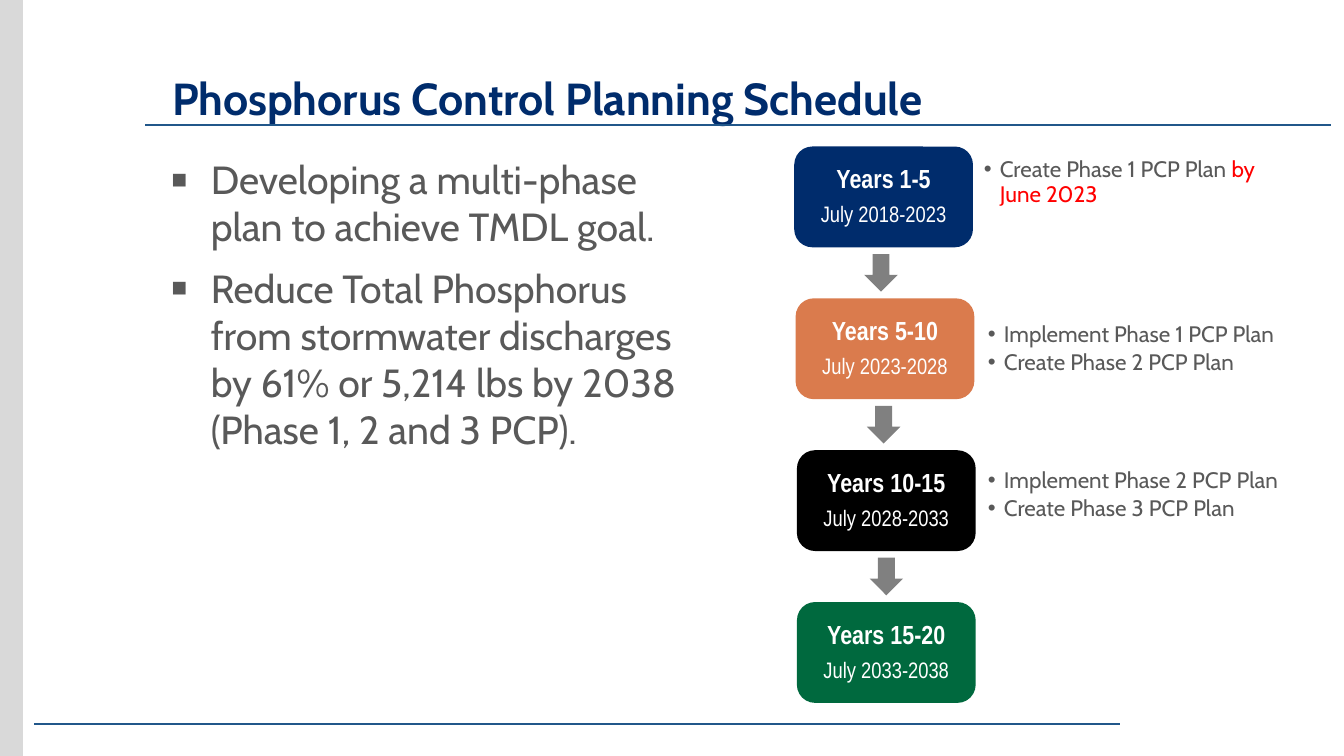
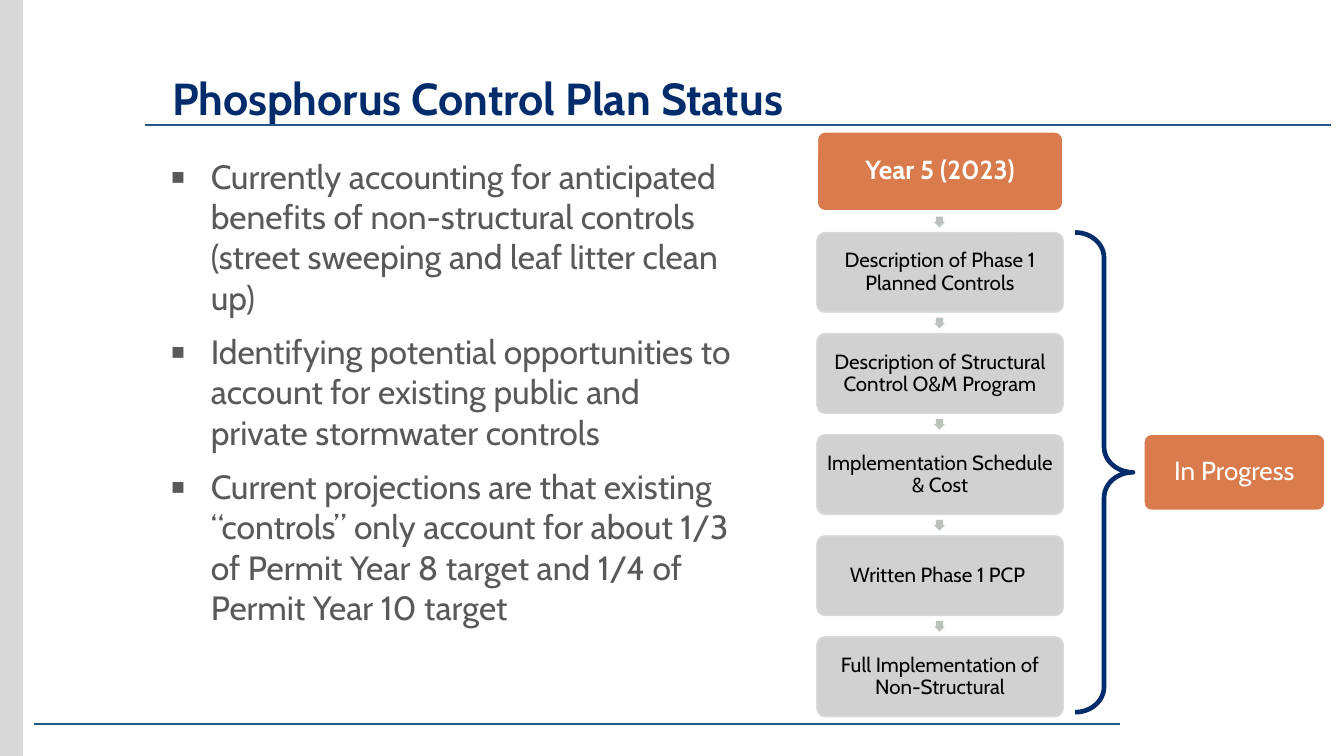
"""Builds two slides on the phosphorus control plan: its schedule and its status."""
from lxml import etree
from pptx import Presentation
from pptx.dml.color import RGBColor
from pptx.enum.shapes import MSO_CONNECTOR, MSO_SHAPE
from pptx.enum.text import MSO_ANCHOR, MSO_AUTO_SIZE, PP_ALIGN
from pptx.oxml.ns import qn
from pptx.util import Inches, Pt

RECT, ROUNDED = MSO_SHAPE.RECTANGLE, MSO_SHAPE.ROUNDED_RECTANGLE
DOWN_ARROW, RIGHT_ARROW = MSO_SHAPE.DOWN_ARROW, MSO_SHAPE.RIGHT_ARROW
BRACE = MSO_SHAPE.RIGHT_BRACE
STRAIGHT = MSO_CONNECTOR.STRAIGHT
TOP, MIDDLE, BOTTOM = MSO_ANCHOR.TOP, MSO_ANCHOR.MIDDLE, MSO_ANCHOR.BOTTOM
LEFT, CENTER = PP_ALIGN.LEFT, PP_ALIGN.CENTER
NO_AUTOFIT = MSO_AUTO_SIZE.NONE

NAVY = RGBColor(0x00, 0x2C, 0x6C)
ORANGE = RGBColor(0xDA, 0x7B, 0x4D)
GREEN = RGBColor(0x00, 0x69, 0x3E)
BLACK = RGBColor(0x00, 0x00, 0x00)
WHITE = RGBColor(0xFF, 0xFF, 0xFF)
RED = RGBColor(0xFF, 0x00, 0x00)
TEXT_GRAY = RGBColor(0x59, 0x59, 0x59)
BAND_GRAY = RGBColor(0xD9, 0xD9, 0xD9)
ARROW_GRAY = RGBColor(0x80, 0x80, 0x80)
STEP_GRAY = RGBColor(0xCC, 0xCC, 0xCC)
STEP_EDGE = RGBColor(0xD5, 0xD9, 0xD6)
STEP_ARROW = RGBColor(0xBB, 0xC3, 0xBC)
RULE_BLUE = RGBColor(0x21, 0x57, 0x8A)

BODY_FONT, STAGE_FONT = "Cabin", "Arial Narrow"
SLIDE_WIDTH = 10
SLIDE_HEIGHT = SLIDE_WIDTH * 9 / 16
RULES = [(8.33, 0.25, 5.39), (9.9, 1.08, 0.93)]

SCHEDULE_TITLE = "Phosphorus Control Planning Schedule"
SCHEDULE_POINTS = [
    "Developing a multi-phase plan to achieve TMDL goal.",
    "Reduce Total Phosphorus from stormwater discharges by 61% or 5,214 lbs "
    "by 2038 (Phase 1, 2 and 3 PCP).",
]
STAGES = [
    ("Years 1-5", "July 2018-2023", NAVY, 5.91),
    ("Years 5-10", "July 2023-2028", ORANGE, 5.92),
    ("Years 10-15", "July 2028-2033", BLACK, 5.93),
    ("Years 15-20", "July 2033-2038", GREEN, 5.93),
]
STAGE_TASKS = [
    ((7.27, 1.13, 2.33, 0.75), TOP,
     [[("Create Phase 1 PCP Plan ", TEXT_GRAY), ("by June 2023", RED)]]),
    ((7.3, 2.22, 2.66, 0.75), MIDDLE,
     [[("Implement Phase 1 PCP Plan", TEXT_GRAY)], [("Create Phase 2 PCP Plan", TEXT_GRAY)]]),
    ((7.3, 3.31, 2.45, 0.75), MIDDLE,
     [[("Implement Phase 2 PCP Plan", TEXT_GRAY)], [("Create Phase 3 PCP Plan", TEXT_GRAY)]]),
]

STATUS_TITLE = "Phosphorus Control Plan Status"
STATUS_POINTS = [
    "Currently accounting for anticipated benefits of non-structural controls "
    "(street sweeping and leaf litter clean up)",
    "Identifying potential opportunities to account for existing public and "
    "private stormwater controls",
    "Current projections are that existing “controls” only account for about "
    "1/3 of Permit Year 8 target and 1/4 of Permit Year 10 target",
]
MILESTONE = "Year 5 (2023)"
STEPS = [
    "Description of Phase 1 Planned Controls",
    "Description of Structural Control O&M Program",
    "Implementation Schedule & Cost",
    "Written Phase 1 PCP ",
    "Full Implementation of Non-Structural",
]
PROGRESS = "In Progress"


def place(box):
    return [Inches(value) for value in box]


def set_font(font, size, color, name=BODY_FONT, bold=False):
    font.size, font.name, font.bold = Pt(size), name, bold
    font.color.rgb = color


def set_frame(frame, anchor, inset_x, inset_y):
    frame.word_wrap, frame.auto_size = True, NO_AUTOFIT
    frame.vertical_anchor = anchor
    frame.margin_left = frame.margin_right = Inches(inset_x)
    frame.margin_top = frame.margin_bottom = Inches(inset_y)


def set_bullet(paragraph, char, indent, percent=100):
    props = paragraph._p.get_or_add_pPr()
    props.set("marL", str(Inches(indent)))
    props.set("indent", str(-Inches(indent)))
    color = etree.SubElement(props, qn("a:buClr"))
    etree.SubElement(color, qn("a:srgbClr"), val=str(TEXT_GRAY))
    etree.SubElement(props, qn("a:buSzPct"), val=str(percent * 1000))
    etree.SubElement(props, qn("a:buFont"), typeface="Arial")
    etree.SubElement(props, qn("a:buChar"), char=char)


def paragraphs(frame, count):
    return [frame.paragraphs[0]] + [frame.add_paragraph() for _ in range(count - 1)]


def add_figure(slide, kind, box, fill=None, line=None, width=1, adjust=()):
    figure = slide.shapes.add_shape(kind, *place(box))
    figure.shadow.inherit = False
    for index, value in enumerate(adjust):
        figure.adjustments[index] = value
    if fill is None:
        figure.fill.background()
    else:
        figure.fill.solid()
        figure.fill.fore_color.rgb = fill
    if line is None:
        figure.line.fill.background()
    else:
        figure.line.color.rgb = line
        figure.line.width = Pt(width)
    return figure


def add_label(figure, lines, inset):
    set_frame(figure.text_frame, MIDDLE, inset, inset)
    for paragraph, (text, *style) in zip(paragraphs(figure.text_frame, len(lines)), lines):
        paragraph.text = text
        paragraph.alignment = CENTER
        paragraph.line_spacing = 0.9
        paragraph.space_after = Pt(5)
        size, color, name, bold = style
        set_font(paragraph.font, size, color, name, bold)


def make_translucent(figure, percent):
    for color in figure._element.spPr.iter(qn("a:srgbClr")):
        etree.SubElement(color, qn("a:alpha"), val=str(percent * 1000))


def add_slide(deck, heading, points, size, width):
    slide = deck.slides.add_slide(deck.slide_layouts[5])
    add_figure(slide, RECT, (0, 0, 0.17, SLIDE_HEIGHT), BAND_GRAY)
    for start, end, y in RULES:
        rule = slide.shapes.add_connector(STRAIGHT, *place((start, y, end, y)))
        rule.line.color.rgb, rule.line.width = RULE_BLUE, Pt(1)
        etree.SubElement(rule._element.spPr, qn("a:effectLst"))

    title = slide.shapes.title
    title.left, title.top, title.width, title.height = place((1.18, 0.08, 8.72, 0.9))
    set_frame(title.text_frame, BOTTOM, 0.1, 0.05)
    title.text_frame.text = heading
    paragraph = title.text_frame.paragraphs[0]
    paragraph.alignment, paragraph.line_spacing = LEFT, 0.9
    set_font(paragraph.font, 24, NAVY, bold=True)

    body = slide.shapes.add_textbox(*place((1.17, 1.11, width, 4))).text_frame
    set_frame(body, TOP, 0.1, 0.05)
    for index, paragraph in enumerate(paragraphs(body, len(points))):
        paragraph.text = points[index]
        set_bullet(paragraph, "▪", 0.3, 130)
        if index:
            paragraph.space_before = Pt(7.5)
        set_font(paragraph.font, size, TEXT_GRAY)
    return slide


def add_tasks(slide, box, anchor, tasks):
    frame = slide.shapes.add_textbox(*place(box)).text_frame
    set_frame(frame, anchor, 0.05, 0.05)
    for paragraph, parts in zip(paragraphs(frame, len(tasks)), tasks):
        set_bullet(paragraph, "•", 0.12)
        paragraph.line_spacing, paragraph.space_after = 0.9, Pt(2)
        for text, color in parts:
            run = paragraph.add_run()
            run.text = text
            set_font(run.font, 12, color)


def build_schedule(deck):
    slide = add_slide(deck, SCHEDULE_TITLE, SCHEDULE_POINTS, 21, 4.17)
    first, pitch, height = 1.09, 1.13, 0.75
    for index, (years, dates, color, left) in enumerate(STAGES):
        top = first + index * pitch
        stage = add_figure(slide, ROUNDED, (left, top, 1.33, height), color, adjust=[0.18])
        add_label(stage, [(years, 14, WHITE, STAGE_FONT, True),
                          (dates, 12, WHITE, STAGE_FONT, False)], 0.1)
        if index < len(STAGES) - 1:
            arrow_box = (6.43 + 0.02 * index, top + height + 0.05, 0.25, 0.28)
            add_figure(slide, DOWN_ARROW, arrow_box, ARROW_GRAY)
    for box, anchor, tasks in STAGE_TASKS:
        add_tasks(slide, box, anchor, tasks)


def build_status(deck):
    slide = add_slide(deck, STATUS_TITLE, STATUS_POINTS, 18, 4.42)
    left, first, width, height = 6.08, 0.98, 1.83, 0.59
    pitch = (4.74 - first) / len(STEPS)
    milestone = add_figure(slide, ROUNDED, (left, first, width, height), ORANGE, WHITE,
                           adjust=[0.1])
    add_label(milestone, [(MILESTONE, 14, WHITE, BODY_FONT, True)], 0.03)
    for index, text in enumerate(STEPS, 1):
        top = first + index * pitch
        arrow = add_figure(slide, RIGHT_ARROW, (6.95, top - 0.12, 0.08, 0.08), STEP_ARROW,
                           adjust=[0.67, 0.5])
        arrow.rotation = 90
        step = add_figure(slide, ROUNDED, (left, top, width, height), STEP_GRAY, STEP_EDGE,
                          adjust=[0.1])
        make_translucent(step, 90)
        add_label(step, [(text, 11, BLACK, BODY_FONT, False)], 0.03)
    add_figure(slide, BRACE, (8, 1.73, 0.43, 3.57), line=NAVY, width=2.5, adjust=[0.44, 0.5])
    progress = add_figure(slide, ROUNDED, (8.51, 3.23, 1.35, 0.57), ORANGE, WHITE, adjust=[0.1])
    add_label(progress, [(PROGRESS, 14, WHITE, BODY_FONT, False)], 0.1)


def main():
    deck = Presentation()
    deck.slide_width, deck.slide_height = Inches(SLIDE_WIDTH), Inches(SLIDE_HEIGHT)
    build_schedule(deck)
    build_status(deck)
    deck.save("out.pptx")


if __name__ == "__main__":
    main()
